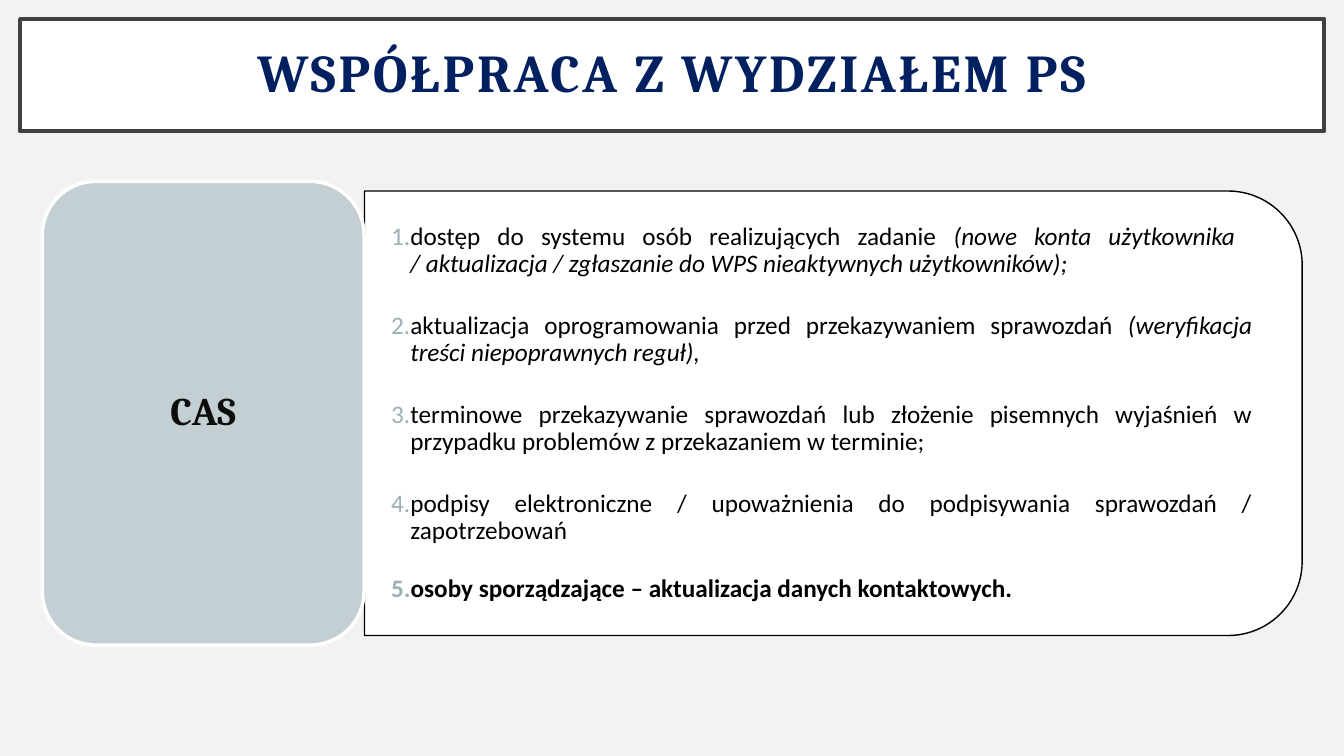
"""Build the slide on cooperation with the PS department."""
from dataclasses import dataclass

from lxml import etree
from pptx import Presentation
from pptx import util as u
from pptx.dml.color import RGBColor
from pptx.enum import shapes, text
from pptx.oxml.ns import qn

COLORS = {
    "background": "F2F2F2", "white": "FFFFFF", "frame": "404040",
    "title": "002060", "black": "000000", "label": "0D0D0D",
    "label_fill": "C3CFD3", "number": "9BAFB5",
}
SHAPE = shapes.MSO_SHAPE
INDENT = u.Inches(0.19)


@dataclass
class Panel:
    kind: int
    box: tuple[float, float, float, float]
    fill: str
    line: str
    line_width: float
    rotation: float = 0
    label: str = ""
    size: float = 0
    color: str = "black"
    spacing: float = 0


@dataclass
class Run:
    text: str
    italic: bool = False
    bold: bool = False
    break_before: bool = False


@dataclass
class Item:
    runs: list[Run]
    gap: float = 24.6


PANELS = [
    Panel(SHAPE.RECTANGLE, (0.2, 0.19, 12.93, 1.11), "white", "frame", 3,
          label="WSPÓŁPRACA Z WYDZIAŁEM PS", size=38, color="title", spacing=2),
    Panel(SHAPE.ROUND_2_SAME_RECTANGLE, (6.06, -0.55, 4.41, 9.3),
          "white", "black", 1, rotation=90),
    Panel(SHAPE.ROUNDED_RECTANGLE, (0.42, 1.8, 3.19, 4.6),
          "label_fill", "white", 2.5, label="CAS", size=28, color="label"),
]

ITEMS = [
    Item([Run("dostęp do systemu osób realizujących zadanie "),
          Run("(nowe konta użytkownika ", italic=True),
          Run("/ aktualizacja / zgłaszanie do WPS nieaktywnych użytkowników);",
              italic=True, break_before=True)]),
    Item([Run("aktualizacja oprogramowania przed przekazywaniem sprawozdań "),
          Run("(weryfikacja treści niepoprawnych reguł),", italic=True)]),
    Item([Run("terminowe przekazywanie sprawozdań lub złożenie pisemnych wyjaśnień "
              "w przypadku problemów z przekazaniem w terminie;")]),
    Item([Run("podpisy elektroniczne / upoważnienia do podpisywania sprawozdań / "
              "zapotrzebowań")], gap=22),
    Item([Run("osoby sporządzające – aktualizacja danych kontaktowych.", bold=True)],
         gap=0),
]


def rgb(name: str) -> RGBColor:
    """Return a palette colour."""
    return RGBColor.from_string(COLORS[name])


def set_attrs(target: object, values: dict[str, object]) -> None:
    """Set every named attribute on the target."""
    for name, value in values.items():
        setattr(target, name, value)


def add_run(p, content: str, color: str, fmt: dict[str, object]):
    """Append a formatted run to a paragraph."""
    r = p.add_run()
    r.text = content
    set_attrs(r.font, fmt)
    r.font.color.rgb = rgb(color)
    return r


def set_frame(tf, side: float, top: float) -> None:
    """Wrap and centre a text frame vertically, with insets."""
    set_attrs(tf, {
        "word_wrap": True, "vertical_anchor": text.MSO_ANCHOR.MIDDLE,
        "margin_left": u.Inches(side), "margin_right": u.Inches(side),
        "margin_top": u.Inches(top), "margin_bottom": u.Inches(top),
    })


def add_panel(s, panel: Panel) -> None:
    """Draw a filled panel with its optional label."""
    sp = s.shapes.add_shape(panel.kind, *map(u.Inches, panel.box))
    sp.rotation = panel.rotation
    sp.shadow.inherit = False
    sp.fill.solid()
    sp.fill.fore_color.rgb = rgb(panel.fill)
    sp.line.color.rgb = rgb(panel.line)
    sp.line.width = u.Pt(panel.line_width)
    if not panel.label:
        return
    set_frame(sp.text_frame, 0.12, 0.06)
    p = sp.text_frame.paragraphs[0]
    set_attrs(p, {"alignment": text.PP_ALIGN.CENTER, "line_spacing": 0.9})
    r = add_run(p, panel.label, panel.color,
                {"name": "Cambria", "size": u.Pt(panel.size), "bold": True})
    if panel.spacing:
        r.font._element.set("spc", str(int(panel.spacing * 100)))


def number_paragraph(p) -> None:
    """Give a paragraph a hanging automatic number."""
    pPr = p._p.get_or_add_pPr()
    pPr.set("marL", str(INDENT))
    pPr.set("indent", str(-INDENT))
    color = etree.SubElement(pPr, qn("a:buClr"))
    etree.SubElement(color, qn("a:srgbClr"), val=COLORS["number"])
    etree.SubElement(pPr, qn("a:buFont"), typeface="+mj-lt")
    etree.SubElement(pPr, qn("a:buAutoNum"), type="arabicPeriod")


def add_list(s, items: list[Item]) -> None:
    """Write the numbered list of duties."""
    sp = s.shapes.add_textbox(*map(u.Inches, (3.61, 2.11, 9.08, 3.98)))
    tf = sp.text_frame
    set_frame(tf, 0.27, 0.14)
    for i, item in enumerate(items):
        p = tf.add_paragraph() if i else tf.paragraphs[0]
        set_attrs(p, {"alignment": text.PP_ALIGN.JUSTIFY, "line_spacing": 0.9,
                      "space_after": u.Pt(item.gap)})
        number_paragraph(p)
        for run in item.runs:
            if run.break_before:
                p.add_line_break()
            add_run(p, run.text, "black",
                    {"name": "Calibri", "size": u.Pt(18),
                     "italic": run.italic, "bold": run.bold})


def main() -> None:
    """Assemble and save the slide."""
    prs = Presentation()
    set_attrs(prs, {"slide_width": u.Inches(13.33), "slide_height": u.Inches(7.5)})
    s = prs.slides.add_slide(prs.slide_layouts[6])
    s.background.fill.solid()
    s.background.fill.fore_color.rgb = rgb("background")
    for panel in PANELS:
        add_panel(s, panel)
    add_list(s, ITEMS)
    prs.save("out.pptx")


if __name__ == "__main__":
    main()
